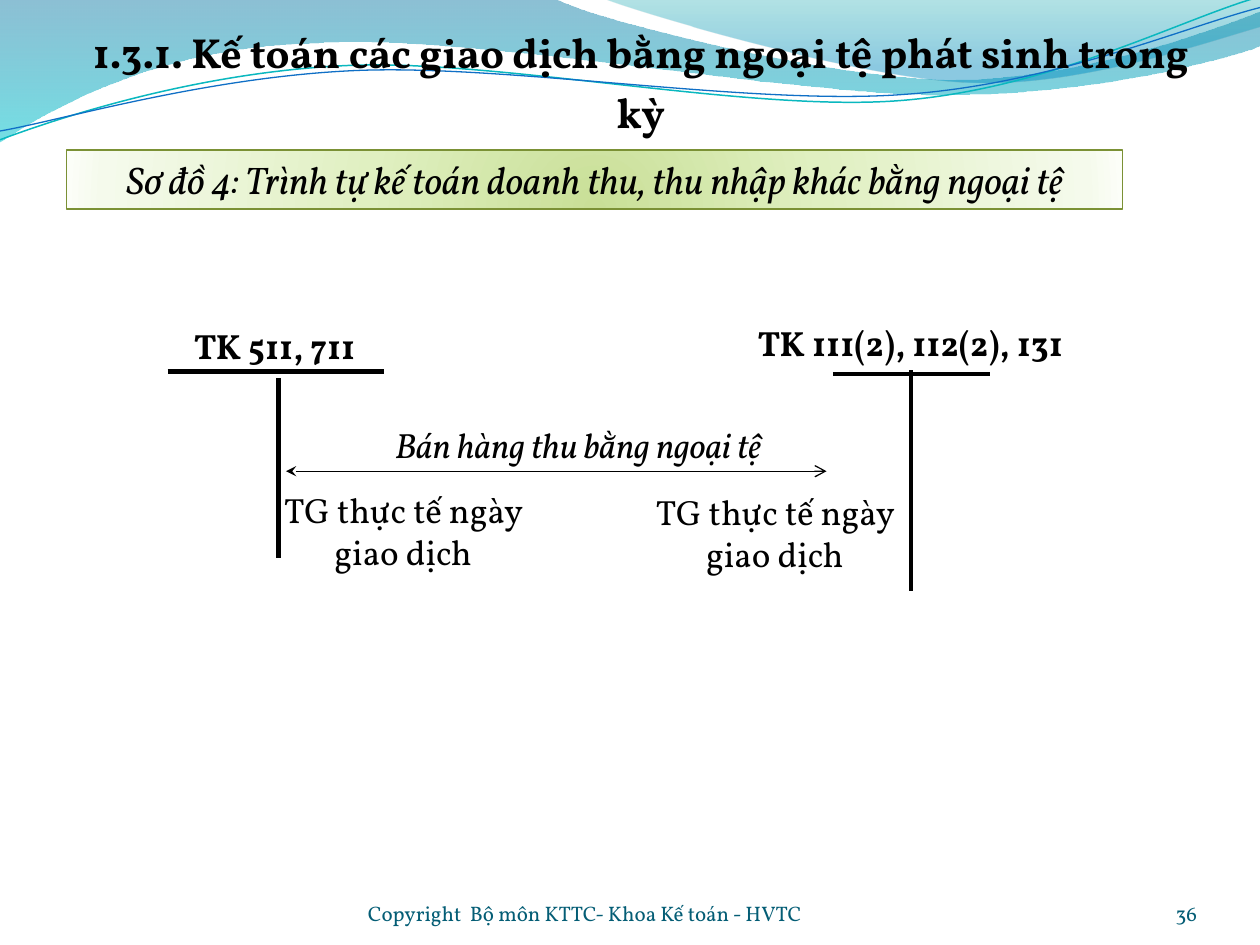
from lxml import etree
from pptx import Presentation
from pptx.dml.color import RGBColor
from pptx.enum.shapes import MSO_CONNECTOR, MSO_SHAPE
from pptx.enum.text import MSO_ANCHOR, MSO_AUTO_SIZE, PP_ALIGN
from pptx.oxml import parse_xml
from pptx.oxml.ns import qn
from pptx.util import Inches, Pt

LEFT, CENTER, RIGHT = PP_ALIGN.LEFT, PP_ALIGN.CENTER, PP_ALIGN.RIGHT
TOP, BOTTOM = MSO_ANCHOR.TOP, MSO_ANCHOR.BOTTOM
GROW = MSO_AUTO_SIZE.SHAPE_TO_FIT_TEXT
FONT = "Vollkorn"
BLACK = RGBColor(0x00, 0x00, 0x00)
FOOTER_COLOR = RGBColor(0x04, 0x5D, 0x75)
OLIVE = RGBColor(0x7B, 0x91, 0x35)
TEAL = RGBColor(0x0A, 0xB8, 0xBF)
BLUE = RGBColor(0x0F, 0x6F, 0xC6)
DRAWING = "http://schemas.openxmlformats.org/drawingml/2006/main"
UNITS = 1000  # freeform grid steps per inch

# Content: positions in inches as left, top, width, height
TITLE = "1.3.1. Kế toán các giao dịch bằng ngoại tệ phát sinh trong kỳ"
BANNER = "Sơ đồ 4: Trình tự kế toán doanh thu, thu nhập khác bằng ngoại tệ"
RATE = "TG thực tế ngày giao dịch"
LABELS = [
    ("TK 111(2), 112(2), 131", (4.92, 2.5, 4.61, 0.44), {"bold": True}),
    ("TK 511, 711", (0.51, 2.53, 3.34, 0.44), {"bold": True}),
    (RATE, (2.11, 3.83, 2.18, 0.77), {}),
    (RATE, (5.06, 3.84, 2.18, 0.77), {}),
    ("Bán hàng thu bằng ngoại tệ ", (2.35, 3.31, 4.53, 0.44), {"italic": True}),
]
FOOTERS = [
    ("Copyright  Bộ môn KTTC- Khoa Kế toán - HVTC", (2.92, 6.95, 3.67, 0.4), LEFT),
    ("36", (8.67, 6.95, 0.83, 0.4), RIGHT),
]
# T-account rules: start, end, width in points
ACCOUNT_LINES = [
    ((1.33, 2.95), (3.05, 2.95), 3),
    ((2.21, 3), (2.21, 4.43), 3),
    ((6.61, 2.97), (7.86, 2.97), 2.25),
    ((7.23, 2.94), (7.23, 4.69), 2.25),
]
ENTRY_ARROW = ((2.27, 3.74), (6.56, 3.74), 0.75)

# Wave outlines: a pair is a line end, six numbers are a Bézier segment
WAVES = [
    ([(0, 0), (4.4, -0.01), (4.76, 0.17, 6.64, 0.63, 7.58, 0.63),
      (8.53, 0.63, 9.58, 0.26, 10, 0.09), (10.01, 0.36),
      (9.83, 0.44, 8.7, 0.76, 7.46, 0.75), (6.22, 0.75, 3.82, 0.28, 2.57, 0.34),
      (1.29, 0.36, 0.46, 0.83, -0.01, 1.13), (0, 0)],
     [(0, "0074A1", 45), (100, "00C6CF", 55)]),
    ([(4.79, -0.01), (5.09, 0.11, 6.82, 0.62, 7.69, 0.65),
      (8.56, 0.69, 9.61, 0.32, 10, 0.21), (10, 0), (4.79, -0.01)],
     [(0, "00A1A9", 30), (80, "008BBF", 45)]),
]
WAVE_LINES = [
    ([(0, 1.11), (0.48, 0.93, 1.58, 0.57, 2.77, 0.52),
      (3.95, 0.47, 5.93, 0.89, 7.13, 0.8), (8.33, 0.71, 9.38, 0.15, 9.98, -0.02)],
     TEAL, 0.85),
    ([(0, 1.04), (0.47, 0.96, 1.64, 0.61, 2.83, 0.56),
      (4.03, 0.51, 5.97, 0.84, 7.17, 0.75), (8.36, 0.67, 9.41, 0.21, 10, 0.06)],
     BLUE, 0.75),
]
BANNER_STOPS = [(0, "C9DF97", 100), (43, "E0F0C1", 100),
                (93, "F5FAEC", 100), (100, "FCFEF8", 100)]
DOWNWARD = '<a:lin ang="5400000" scaled="0"/>'
RADIAL = ('<a:path path="circle"><a:fillToRect l="50000" t="130000" '
          'r="50000" b="-30000"/></a:path>')


def add_curve(slide, segments, closed):
    """Build a freeform through the segment ends, then bend its Bézier segments."""
    segments = [[round(value * UNITS) for value in segment] for segment in segments]
    ends = [segment[-2:] for segment in segments]
    builder = slide.shapes.build_freeform(*ends[0], scale=Inches(1) / UNITS)
    builder.add_line_segments(ends[1:], close=closed)
    shape = builder.convert_to_shape()
    left, top = (min(axis) for axis in zip(*ends))
    sides = list(shape.element.spPr.iter(qn("a:lnTo")))
    for side, segment in zip(sides, segments[1:]):
        if len(segment) == 6:
            bend = etree.Element(qn("a:cubicBezTo"))
            for x, y in zip(segment[::2], segment[1::2]):
                etree.SubElement(bend, qn("a:pt"), x=str(x - left), y=str(y - top))
            side.getparent().replace(side, bend)
    shape.shadow.inherit = False
    shape.fill.background()
    return shape


def set_gradient(shape, stops, direction):
    shape.fill.background()
    stop_xml = "".join(
        f'<a:gs pos="{position * 1000}"><a:srgbClr val="{color}">'
        f'<a:alpha val="{opacity * 1000}"/></a:srgbClr></a:gs>'
        for position, color, opacity in stops)
    gradient = parse_xml(f'<a:gradFill xmlns:a="{DRAWING}" rotWithShape="1">'
                         f'<a:gsLst>{stop_xml}</a:gsLst>{direction}</a:gradFill>')
    properties = shape.element.spPr
    properties.replace(properties.find(qn("a:noFill")), gradient)


def write(shape, text, size=20, color=BLACK, align=CENTER, anchor=TOP,
          bold=False, italic=False, spacing=1.0):
    frame = shape.text_frame
    frame.word_wrap = True
    frame.vertical_anchor = anchor
    paragraph = frame.paragraphs[0]
    paragraph.alignment = align
    paragraph.line_spacing = spacing
    run = paragraph.add_run()
    run.text = text
    font = run.font
    font.name, font.size, font.bold, font.italic = FONT, Pt(size), bold, italic
    font.color.rgb = color
    return frame


def add_line(slide, start, end, width):
    connector = slide.shapes.add_connector(
        MSO_CONNECTOR.STRAIGHT, *map(Inches, start + end))
    connector.line.color.rgb = BLACK
    connector.line.width = Pt(width)
    etree.SubElement(connector.element.spPr, qn("a:effectLst"))
    return connector


def main():
    presentation = Presentation()
    presentation.slide_width, presentation.slide_height = Inches(10), Inches(7.5)
    slide = presentation.slides.add_slide(presentation.slide_layouts[5])
    shapes = slide.shapes

    # Wave decoration
    for segments, stops in WAVES:
        wave = add_curve(slide, segments, closed=True)
        wave.line.fill.background()
        set_gradient(wave, stops, DOWNWARD)
    for segments, color, width in WAVE_LINES:
        curve = add_curve(slide, segments, closed=False)
        curve.line.color.rgb = color
        curve.line.width = Pt(width)

    # Footer and slide number
    for text, box, align in FOOTERS:
        frame = write(shapes.add_textbox(*map(Inches, box)), text, 12,
                      FOOTER_COLOR, align, BOTTOM)
        frame.margin_left = frame.margin_right = 0
        frame.margin_top = frame.margin_bottom = 0

    # Diagram heading
    banner = shapes.add_shape(MSO_SHAPE.RECTANGLE,
                              *map(Inches, (0.53, 1.19, 8.38, 0.47)))
    banner.line.color.rgb = OLIVE
    banner.line.width = Pt(0.75)
    set_gradient(banner, BANNER_STOPS, RADIAL)
    banner.shadow.inherit = False
    write(banner, BANNER, 22, italic=True).auto_size = GROW

    # T-accounts and the entry between them
    for start, end, width in ACCOUNT_LINES:
        add_line(slide, start, end, width)
    arrow = add_line(slide, *ENTRY_ARROW)
    arrow_line = arrow.element.spPr.find(qn("a:ln"))
    for tag, kind in (("a:headEnd", "stealth"), ("a:tailEnd", "arrow")):
        etree.SubElement(arrow_line, qn(tag), type=kind)
    for text, box, style in LABELS:
        label = shapes.add_textbox(*map(Inches, box))
        write(label, text, **style).auto_size = GROW

    # Title, in front of the waves
    title = shapes.title
    title.left, title.top, title.width, title.height = map(
        Inches, (0.42, 0.08, 9.33, 0.55))
    write(title, TITLE, 24, bold=True, spacing=1.2).auto_size = GROW
    title.element.getparent().append(title.element)

    presentation.save("out.pptx")


if __name__ == "__main__":
    main()
